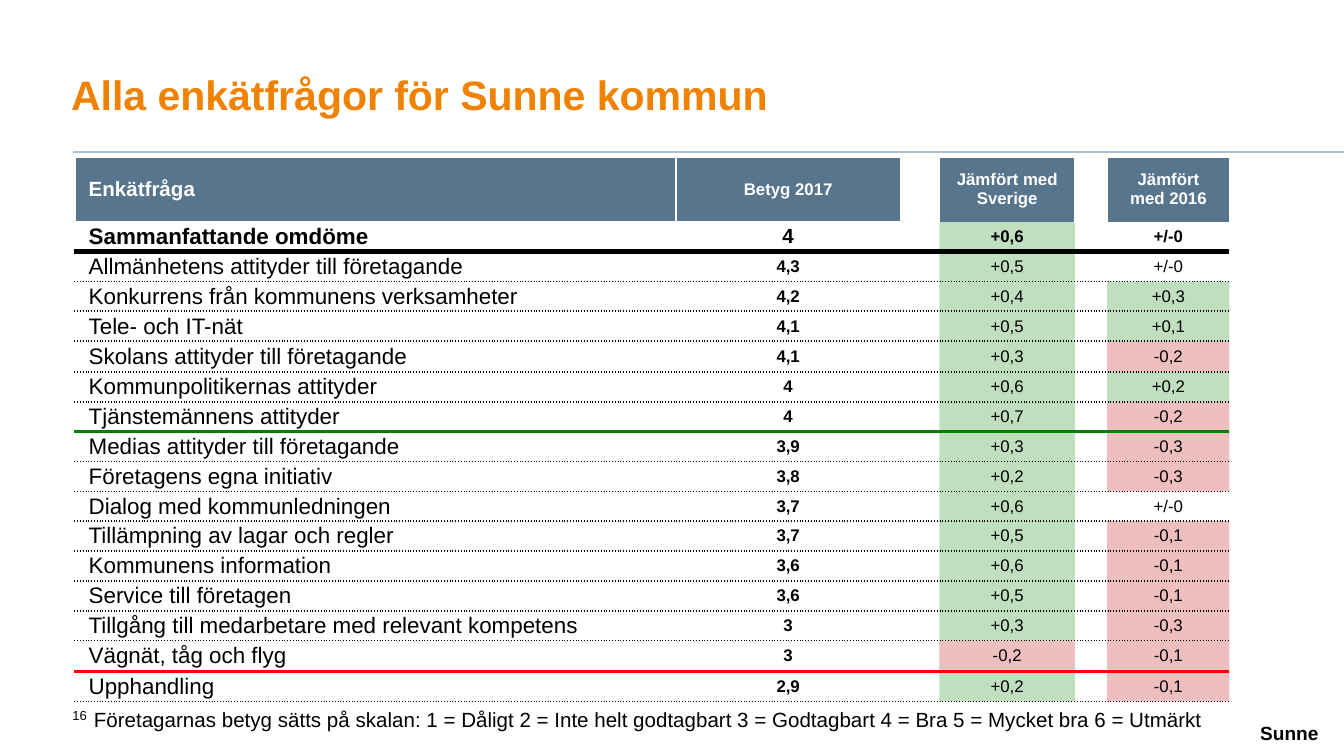
import dataclasses

import pptx
import pptx.dml.color
import pptx.enum.shapes
import pptx.enum.text
import pptx.oxml.ns
import pptx.util
from lxml import etree

Inches = pptx.util.Inches
Pt = pptx.util.Pt
Align = pptx.enum.text.PP_ALIGN
Anchor = pptx.enum.text.MSO_ANCHOR
qn = pptx.oxml.ns.qn


@dataclasses.dataclass(frozen=True)
class Theme:
    """Colours, font and type sizes of the slide."""
    font: str = "Arial"
    white: str = "FFFFFF"
    black: str = "000000"
    orange: str = "EF8200"
    header: str = "57758D"
    rule: str = "AEC1CF"
    green: str = "008000"
    dark_red: str = "C00000"
    red: str = "FF0000"
    title: float = 22
    question: float = 12
    heading: float = 11
    sender: float = 10.2
    value: float = 9
    number: float = 7


THEME = Theme()
SLIDE_WIDTH = 10
SLIDE_HEIGHT = SLIDE_WIDTH * 9 / 16
NO_STYLE = "{2D5ABB26-0587-4C30-8999-92F81FD0307C}"
COLUMN_WIDTHS = (4.47, 1.67, 0.29, 1.01, 0.23, 0.91)
HEADER_HEIGHT = 0.48
TALL_HEIGHT = 0.23
TALL_ROWS = ("Skolans attityder till företagande", "Vägnät, tåg och flyg")
HEADINGS = ("Enkätfråga", "Betyg 2017", "Jämfört med Sverige", "Jämfört med 2016")
RATINGS = (
    ("Sammanfattande omdöme", "4", "+0,6", "+/-0"),
    ("Allmänhetens attityder till företagande", "4,3", "+0,5", "+/-0"),
    ("Konkurrens från kommunens verksamheter", "4,2", "+0,4", "+0,3"),
    ("Tele- och IT-nät", "4,1", "+0,5", "+0,1"),
    ("Skolans attityder till företagande", "4,1", "+0,3", "-0,2"),
    ("Kommunpolitikernas attityder", "4", "+0,6", "+0,2"),
    ("Tjänstemännens attityder", "4", "+0,7", "-0,2"),
    ("Medias attityder till företagande", "3,9", "+0,3", "-0,3"),
    ("Företagens egna initiativ", "3,8", "+0,2", "-0,3"),
    ("Dialog med kommunledningen", "3,7", "+0,6", "+/-0"),
    ("Tillämpning av lagar och regler", "3,7", "+0,5", "-0,1"),
    ("Kommunens information", "3,6", "+0,6", "-0,1"),
    ("Service till företagen", "3,6", "+0,5", "-0,1"),
    ("Tillgång till medarbetare med relevant kompetens", "3", "+0,3", "-0,3"),
    ("Vägnät, tåg och flyg", "3", "-0,2", "-0,1"),
    ("Upphandling", "2,9", "+0,2", "-0,1"),
)
DOTTED = (THEME.black, 1, "sysDot")
SEPARATORS = {
    1: (THEME.black, 3, "solid"),
    7: (THEME.green, 2, "solid"),
    15: (THEME.red, 2, "solid"),
}


def rgb(value):
    """Return a colour object for a hex value."""
    return pptx.dml.color.RGBColor.from_string(value)


def add_run(paragraph, text, size, color, bold=False):
    """Add one formatted run to a paragraph."""
    run = paragraph.add_run()
    run.text = text
    run.font.name = THEME.font
    run.font.size = Pt(size)
    run.font.bold = bold
    run.font.color.rgb = rgb(color)


def add_text(slide, box, text, size, color=THEME.black, bold=False,
             anchor=Anchor.TOP, align=Align.LEFT, margins=(0.1, 0.05, 0.1, 0.05)):
    """Place a one-line text box in the given box."""
    frame = slide.shapes.add_textbox(*map(Inches, box)).text_frame
    frame.word_wrap = True
    frame.vertical_anchor = anchor
    (frame.margin_left, frame.margin_top,
     frame.margin_right, frame.margin_bottom) = map(Inches, margins)
    paragraph = frame.paragraphs[0]
    paragraph.alignment = align
    add_run(paragraph, text, size, color, bold)


def set_borders(cell, left, right, top, bottom):
    """Write the four borders of a cell, None meaning no line."""
    properties = cell._tc.get_or_add_tcPr()
    for side, border in zip("LRTB", (left, right, top, bottom)):
        line = etree.SubElement(properties, qn(f"a:ln{side}"))
        if border is None:
            line.set("w", "0")
            etree.SubElement(line, qn("a:noFill"))
            continue
        color, width, dash = border
        line.set("w", str(Pt(width)))
        fill = etree.SubElement(line, qn("a:solidFill"))
        etree.SubElement(fill, qn("a:srgbClr"), val=color)
        etree.SubElement(line, qn("a:prstDash"), val=dash)


def fill_cell(cell, color, opacity=100):
    """Fill a cell, or clear it when there is no colour."""
    if color is None:
        cell.fill.background()
        return
    cell.fill.solid()
    cell.fill.fore_color.rgb = rgb(color)
    if opacity < 100:
        tone = cell._tc.tcPr.find(f"{qn('a:solidFill')}/{qn('a:srgbClr')}")
        etree.SubElement(tone, qn("a:alpha"), val=str(opacity * 1000))


def write_cell(cell, text, size, color, bold, align):
    """Write a vertically centred cell, keeping empty cells small."""
    cell.vertical_anchor = Anchor.MIDDLE
    cell.margin_left = cell.margin_right = Inches(0.1)
    cell.margin_top = cell.margin_bottom = 0
    paragraph = cell.text_frame.paragraphs[0]
    paragraph.alignment = align
    if text:
        add_run(paragraph, text, size, color, bold)
    else:
        etree.SubElement(paragraph._p, qn("a:endParaRPr"), sz=str(Pt(size).centipoints))


def cell_borders(row, column):
    """Return the left, right, top and bottom borders of a table position."""
    white = (THEME.white, 1, "solid")
    left = white if row == 0 or column <= 2 else None
    right = white if row == 0 or column <= 1 else None
    edge = None if column in (3, 5) else white
    top = white if row == 0 else edge if row == 1 else SEPARATORS.get(row - 1, DOTTED)
    bottom = edge if row == 0 else SEPARATORS.get(row, DOTTED)
    return left, right, top, bottom


def cell_style(row, column, text):
    """Return size, text colour, weight, fill and opacity of a table position."""
    if row == 0:
        size = THEME.heading if column == 0 else THEME.value
        return size, THEME.white, True, THEME.header if text else None, 100
    bold = row == 1 or column == 1
    if column == 0:
        return THEME.question, THEME.black, bold, None, 100
    if column == 1:
        size = THEME.heading if row == 1 else THEME.value
        return size, THEME.black, bold, None, 100
    if not text:
        return THEME.value, THEME.black, bold, THEME.white, 100
    tone = {"+/": THEME.white, "+0": THEME.green, "-0": THEME.dark_red}[text[:2]]
    return THEME.value, THEME.black, bold, tone, 25


def add_ratings(slide, box):
    """Build the table of survey ratings in the given box."""
    records = (HEADINGS,) + RATINGS
    table = slide.shapes.add_table(
        len(records), len(COLUMN_WIDTHS), *map(Inches, box)).table
    table.first_row = table.horz_banding = False
    table._tbl.tblPr.find(qn("a:tableStyleId")).text = NO_STYLE
    for column, width in zip(table.columns, COLUMN_WIDTHS):
        column.width = Inches(width)
    tall = len(TALL_ROWS)
    height = (box[3] - HEADER_HEIGHT - tall * TALL_HEIGHT) / (len(RATINGS) - tall)
    for row, (question, rating, country, earlier) in enumerate(records):
        row_height = TALL_HEIGHT if question in TALL_ROWS else height
        table.rows[row].height = Inches(HEADER_HEIGHT if row == 0 else row_height)
        for column, text in enumerate((question, rating, "", country, "", earlier)):
            cell = table.cell(row, column)
            size, color, bold, fill, opacity = cell_style(row, column, text)
            align = Align.LEFT if column == 0 else Align.CENTER
            write_cell(cell, text, size, color, bold, align)
            set_borders(cell, *cell_borders(row, column))
            fill_cell(cell, fill, opacity)


def add_heading(slide, box):
    """Place the title with the rule that runs to the slide edge below it."""
    left, top, width, height = box
    add_text(slide, box, "Alla enkätfrågor för Sunne kommun", THEME.title,
             THEME.orange, True, Anchor.BOTTOM, margins=(0, 0, 0, 0.03))
    rule_top = Inches(top + height + 0.22)
    rule = slide.shapes.add_connector(
        pptx.enum.shapes.MSO_CONNECTOR.STRAIGHT,
        Inches(left + 0.01), rule_top, Inches(SLIDE_WIDTH), rule_top)
    rule.line.color.rgb = rgb(THEME.rule)
    rule.line.width = Pt(1)
    etree.SubElement(rule._element.spPr, qn("a:effectLst"))


def add_footer(slide, box):
    """Place the slide number, the scale note and the sender."""
    left, top, width, height = box
    add_text(slide, (left, top + 0.05, 0.34, 0.13), "16", THEME.number,
             anchor=Anchor.MIDDLE)
    add_text(slide, (left + 0.16, top, 8.6, 0.29),
             "Företagarnas betyg sätts på skalan: 1 = Dåligt 2 = Inte helt godtagbart "
             "3 = Godtagbart 4 = Bra 5 = Mycket bra 6 = Utmärkt", THEME.heading)
    add_text(slide, (left + width - 4.63, top + height - 0.3, 4.63, 0.3), "Sunne",
             THEME.sender, bold=True, anchor=Anchor.BOTTOM, align=Align.RIGHT,
             margins=(0, 0, 0, 0))


def main():
    """Build and save the presentation."""
    presentation = pptx.Presentation()
    presentation.slide_width = Inches(SLIDE_WIDTH)
    presentation.slide_height = Inches(SLIDE_HEIGHT)
    slide = presentation.slides.add_slide(presentation.slide_layouts[6])
    add_heading(slide, (0.53, 0.15, 7.47, 0.76))
    add_footer(slide, (0.44, 5.21, 9.37, 0.33))
    add_ratings(slide, (0.56, 1.17, 8.59, 4.05))
    presentation.save("out.pptx")


if __name__ == "__main__":
    main()
